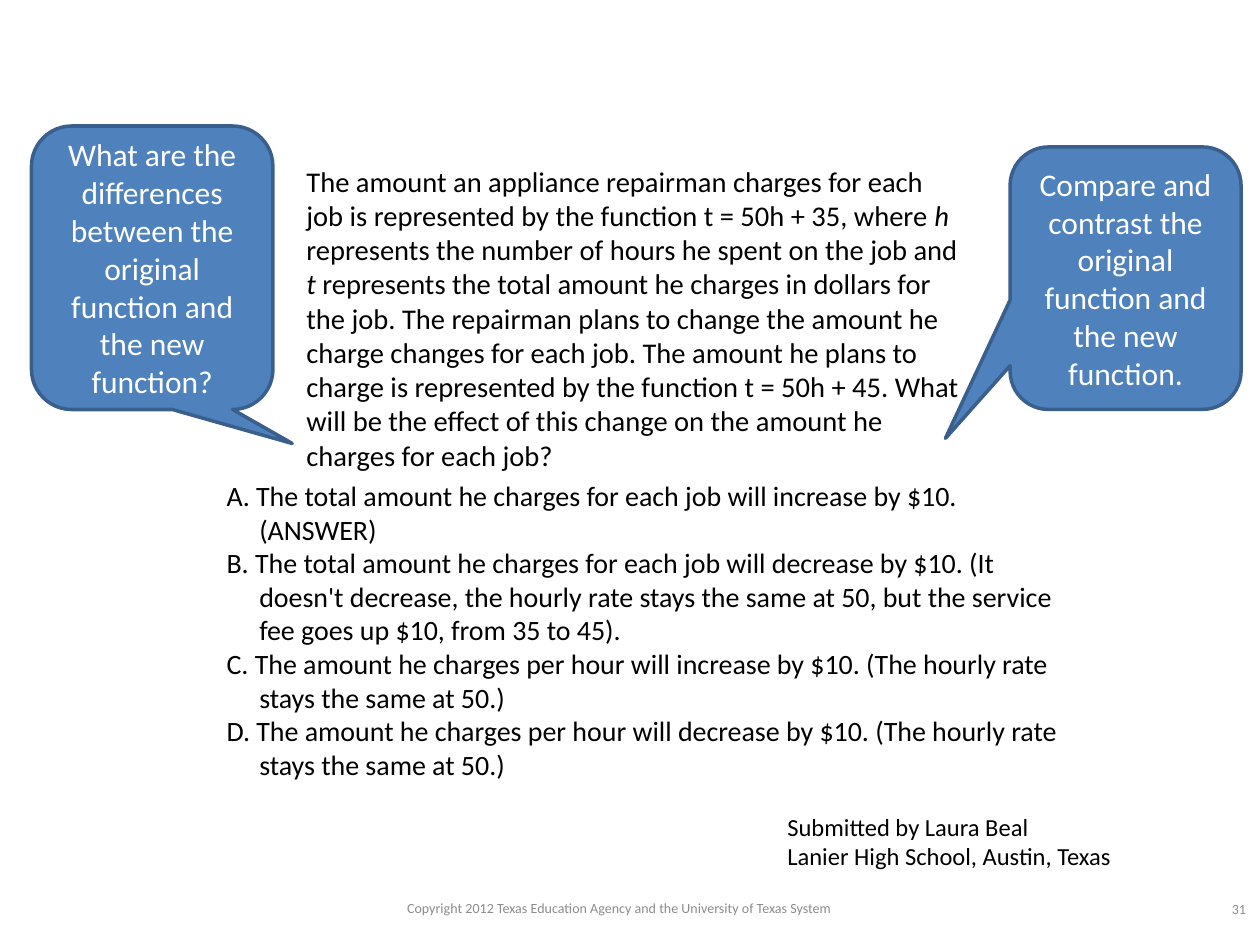
from dataclasses import dataclass

from pptx import Presentation, util as u
from pptx.dml.color import RGBColor
from pptx.enum import shapes, text

UNIT = 1 / 12  # grid step in inches: 120 columns by 90 rows
BLACK, GREY, WHITE = "000000", "8C8C8C", "FFFFFF"
BLUE, DARK_BLUE = "4F81BD", "3A5F8C"


@dataclass
class Box:
    col: float
    row: float
    cols: float
    rows: float

    def lengths(self) -> list[int]:
        return [grid(n) for n in (self.col, self.row, self.cols, self.rows)]


@dataclass
class Block:
    """Paragraphs in a box; a paragraph is a list of (text, italic) runs."""
    box: Box
    paragraphs: list[list[tuple[str, bool]]]
    size: float
    color: str = BLACK
    centred: bool = False
    hanging: bool = False


@dataclass
class Callout:
    box: Box
    words: str
    tip: tuple[float, float]


def grid(n: float) -> int:
    return u.Inches(n * UNIT)


def rgb(value: str) -> RGBColor:
    return RGBColor.from_string(value)


def plain(*lines: str) -> list[list[tuple[str, bool]]]:
    return [[(line, False)] for line in lines]


def write(tf, block: Block) -> None:
    tf.word_wrap = True
    tf.vertical_anchor = (text.MSO_ANCHOR.MIDDLE if block.centred
                          else text.MSO_ANCHOR.TOP)
    for i, runs in enumerate(block.paragraphs):
        p = tf.add_paragraph() if i else tf.paragraphs[0]
        p.alignment = text.PP_ALIGN.CENTER if block.centred else text.PP_ALIGN.LEFT
        if block.hanging:
            pPr = p._p.get_or_add_pPr()
            pPr.set("marL", str(u.Inches(0.51)))
            pPr.set("indent", str(u.Inches(-0.26)))
        for words, italic in runs:
            r = p.add_run()
            r.text = words
            form = {"name": "Calibri", "size": u.Pt(block.size), "italic": italic}
            for key, value in form.items():
                setattr(r.font, key, value)
            r.font.color.rgb = rgb(block.color)


def add_block(s, block: Block) -> None:
    write(s.shapes.add_textbox(*block.box.lengths()).text_frame, block)


def add_callout(s, callout: Callout) -> None:
    sp = s.shapes.add_shape(shapes.MSO_SHAPE.ROUNDED_RECTANGULAR_CALLOUT,
                            *callout.box.lengths())
    sp.adjustments[0], sp.adjustments[1] = callout.tip
    sp.shadow.inherit = False
    sp.fill.solid()
    sp.fill.fore_color.rgb = rgb(BLUE)
    sp.line.color.rgb = rgb(DARK_BLUE)
    sp.line.width = u.Pt(2)
    write(sp.text_frame,
          Block(callout.box, plain(callout.words), 18, WHITE, centred=True))


QUESTION = Block(Box(28, 15, 65, 35), [[
    ("The amount an appliance repairman charges for each job is represented by "
     "the function t = 50h + 35, where ", False),
    ("h", True),
    (" represents the number of hours he spent on the job and ", False),
    ("t", True),
    (" represents the total amount he charges in dollars for the job. The "
     "repairman plans to change the amount he charge changes for each job. The "
     "amount he plans to charge is represented by the function t = 50h + 45. "
     "What will be the effect of this change on the amount he charges for each "
     "job?", False),
]], 16.3)

ANSWERS = Block(Box(17.4, 45, 85, 37.2), plain(
    "A. The total amount he charges for each job will increase by $10. (ANSWER)",
    "B. The total amount he charges for each job will decrease by $10. (It "
    "doesn't decrease, the hourly rate stays the same at 50, but the service "
    "fee goes up $10, from 35 to 45).",
    "C. The amount he charges per hour will increase by $10. (The hourly rate "
    "stays the same at 50.)",
    "D. The amount he charges per hour will decrease by $10. (The hourly rate "
    "stays the same at 50.)",
), 16, hanging=True)

CREDIT = Block(Box(73.8, 76.7, 45, 13.3), plain(
    "Submitted by Laura Beal", "Lanier High School, Austin, Texas"), 14)

COPYRIGHT = Block(Box(25, 85, 68, 3), plain(
    "Copyright 2012 Texas Education Agency and the University of Texas System"),
    8, GREY, centred=True)

PAGE_NUMBER = Block(Box(115, 85, 6, 3.2), plain("31"), 8, GREY, centred=True)

CALLOUTS = [
    Callout(Box(3, 12, 23, 27), "What are the differences between the original "
            "function and the new function?", (0.58, 0.62)),
    Callout(Box(96.2, 14, 22, 25), "Compare and contrast the original function "
            "and the new function.", (-0.78, 0.61)),
]


def main() -> None:
    prs = Presentation()
    prs.slide_width, prs.slide_height = grid(120), grid(90)
    s = prs.slides.add_slide(prs.slide_layouts[6])
    for block in (QUESTION, COPYRIGHT, PAGE_NUMBER):
        add_block(s, block)
    for callout in CALLOUTS:
        add_callout(s, callout)
    for block in (ANSWERS, CREDIT):
        add_block(s, block)
    prs.save("out.pptx")


if __name__ == "__main__":
    main()
